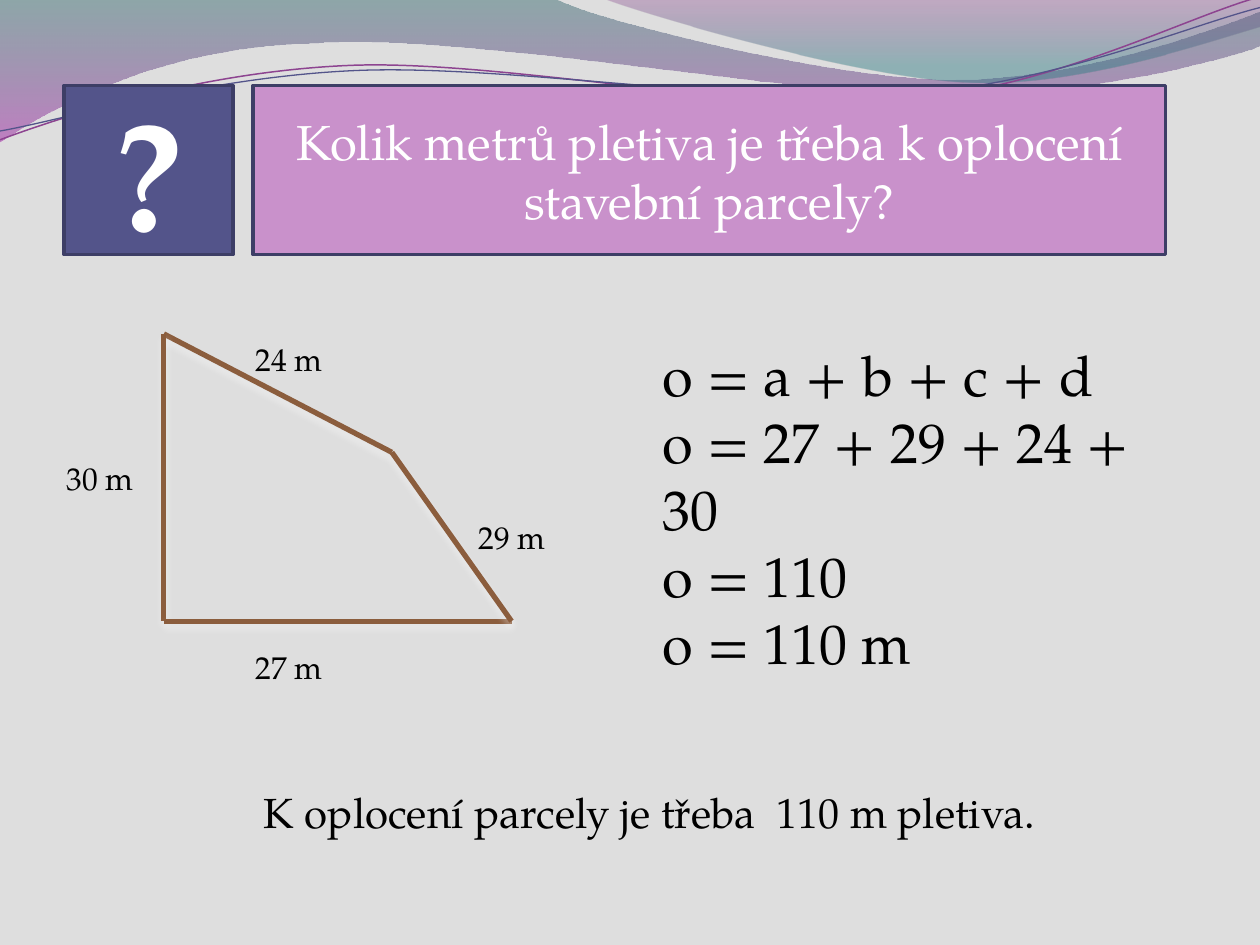
from lxml import etree
from pptx import Presentation
from pptx import util as u
from pptx.dml.color import RGBColor
from pptx.enum import shapes, text
from pptx.oxml.ns import qn

FONT = "TeX Gyre Pagella"
COLORS = {
    "background": "DEDEDE", "indigo": "53548A", "border": "3D3E66",
    "pink": "C991CB", "white": "FFFFFF", "black": "000000",
    "fence": "8B5D3D", "purple": "8D4490",
    "teal": "2D6368", "violet": "A530A9", "plum": "7F2F82", "sea": "2F7B82",
}

# Outlines: a pair is a straight step, six numbers are a Bezier step.
# Gradient stops: position, colour, opacity in percent.
WAVES = [
    ([(0, 0), (4.4, -0.01), (4.76, 0.17, 6.64, 0.63, 7.58, 0.63),
      (8.53, 0.63, 9.58, 0.26, 10, 0.09), (10.01, 0.36),
      (9.83, 0.44, 8.7, 0.76, 7.46, 0.75), (6.22, 0.75, 3.82, 0.28, 2.57, 0.34),
      (1.29, 0.36, 0.46, 0.83, -0.01, 1.13), (0, 0)],
     [(0, "teal", 45), (1, "violet", 55)]),
    ([(4.79, -0.01), (5.09, 0.11, 6.82, 0.62, 7.69, 0.65),
      (8.56, 0.69, 9.61, 0.32, 10, 0.21), (10, 0), (4.79, -0.01)],
     [(0, "plum", 30), (0.8, "sea", 45)]),
]
STRANDS = [
    ([(0, 1.11), (0.48, 0.93, 1.58, 0.57, 2.77, 0.52),
      (3.95, 0.47, 5.93, 0.89, 7.13, 0.8), (8.33, 0.71, 9.38, 0.15, 9.98, -0.02)],
     "purple", 0.85),
    ([(0, 1.04), (0.47, 0.96, 1.64, 0.61, 2.83, 0.56),
      (4.03, 0.51, 5.97, 0.84, 7.17, 0.75), (8.36, 0.67, 9.41, 0.21, 10, 0.06)],
     "indigo", 0.75),
]
HEADER = [  # text, left, width, fill, size, bold
    ("?", 0.51, 1.34, "indigo", 88, True),
    ("Kolik metrů pletiva je třeba k oplocení stavební parcely?",
     2.01, 7.24, "pink", 28, False),
]
HEADER_TOP, HEADER_HEIGHT = 0.68, 1.34
CORNERS = {"A": (1.3, 2.65), "B": (3.11, 3.59), "C": (4.06, 4.93), "D": (1.3, 4.93)}
FENCES = ["AB", "AD", "DC", "BC"]
LABELS = [  # text, box, size, alignment
    (["29 m"], (3.7, 4.06, 1.85, 0.4), 18, "LEFT"),
    (["24 m"], (1.93, 2.65, 1.34, 0.4), 18, "LEFT"),
    (["27 m"], (1.93, 5.09, 1.5, 0.4), 18, "LEFT"),
    (["30 m"], (0.43, 3.59, 0.94, 0.4), 18, "LEFT"),
    (["o = a + b + c + d", "o = 27 + 29 + 24 + 30", "o = 110", "o = 110 m"],
     (5.16, 2.65, 4.33, 2.26), 32, "LEFT"),
    (["K oplocení parcely je třeba  110 m pletiva."],
     (0.98, 6.19, 8.35, 0.5), 24, "CENTER"),
]


def rgb(name):
    return RGBColor.from_string(COLORS[name])


def inches(values):
    return [u.Inches(v) for v in values]


def write(sp, lines, size, color="black", bold=False, align="LEFT", anchor="TOP"):
    tf = sp.text_frame
    tf.word_wrap = True
    tf.vertical_anchor = getattr(text.MSO_ANCHOR, anchor)
    for i, line in enumerate(lines):
        p = tf.add_paragraph() if i else tf.paragraphs[0]
        p.alignment = getattr(text.PP_ALIGN, align)
        r = p.add_run()
        r.text = line
        r.font.name, r.font.size, r.font.bold = FONT, u.Pt(size), bold
        r.font.color.rgb = rgb(color)


def set_line(sp, color, width):
    sp.line.color.rgb = rgb(color)
    sp.line.width = u.Pt(width)


def add_outline(s, steps, close):
    """Draw a freeform through the step ends, then bend its Bezier steps."""
    ends = [inches(step[-2:]) for step in steps]
    builder = s.shapes.build_freeform(*ends[0], scale=1.0)
    builder.add_line_segments(ends[1:], close=close)
    sp = builder.convert_to_shape()
    sp.shadow.inherit = False
    segments = list(sp.element.spPr.iter(qn("a:lnTo")))
    for segment, step in zip(segments, steps[1:]):
        if len(step) == 2:
            continue
        curve = etree.Element(qn("a:cubicBezTo"))
        for x, y in zip(step[::2], step[1::2]):
            etree.SubElement(curve, qn("a:pt"), x=str(u.Inches(x) - sp.left),
                             y=str(u.Inches(y) - sp.top))
        segment.getparent().replace(segment, curve)
    return sp


def add_alpha(color_element, percent):
    etree.SubElement(color_element, qn("a:alpha"), val=str(percent * 1000))


def add_wave(s, steps, stops):
    sp = add_outline(s, steps, close=True)
    sp.line.fill.background()
    sp.fill.gradient()
    sp.fill.gradient_angle = 270
    for stop, (position, color, _) in zip(sp.fill.gradient_stops, stops):
        stop.position = position
        stop.color.rgb = rgb(color)
    colors = list(sp.element.spPr.iter(qn("a:srgbClr")))
    for element, (_, _, opacity) in zip(colors, stops):
        add_alpha(element, opacity)


def add_fence(s, start, end):
    line = s.shapes.add_connector(shapes.MSO_CONNECTOR.STRAIGHT,
                                  *inches(start), *inches(end))
    set_line(line, "fence", 3)
    effects = etree.SubElement(line.element.spPr, qn("a:effectLst"))
    shadow = etree.SubElement(effects, qn("a:outerShdw"), blurRad=str(u.Pt(4.5)),
                              dist=str(u.Pt(3)), dir="5400000", rotWithShape="0")
    add_alpha(etree.SubElement(shadow, qn("a:srgbClr"), val=COLORS["white"]), 48)


def main():
    prs = Presentation()
    prs.slide_width, prs.slide_height = inches((10, 7.5))
    s = prs.slides.add_slide(prs.slide_layouts[6])
    s.background.fill.solid()
    s.background.fill.fore_color.rgb = rgb("background")

    for steps, stops in WAVES:
        add_wave(s, steps, stops)
    for steps, color, width in STRANDS:
        strand = add_outline(s, steps, close=False)
        strand.fill.background()
        set_line(strand, color, width)

    for words, left, width, fill, size, bold in HEADER:
        sp = s.shapes.add_shape(shapes.MSO_SHAPE.RECTANGLE,
                                *inches((left, HEADER_TOP, width, HEADER_HEIGHT)))
        sp.shadow.inherit = False
        sp.fill.solid()
        sp.fill.fore_color.rgb = rgb(fill)
        set_line(sp, "border", 2)
        write(sp, [words], size, color="white", bold=bold,
              align="CENTER", anchor="MIDDLE")

    for start, end in FENCES:
        add_fence(s, CORNERS[start], CORNERS[end])
    for lines, box, size, align in LABELS:
        label = s.shapes.add_textbox(*inches(box))
        write(label, lines, size, align=align)
        label.text_frame.auto_size = text.MSO_AUTO_SIZE.SHAPE_TO_FIT_TEXT

    prs.save("out.pptx")


if __name__ == "__main__":
    main()
